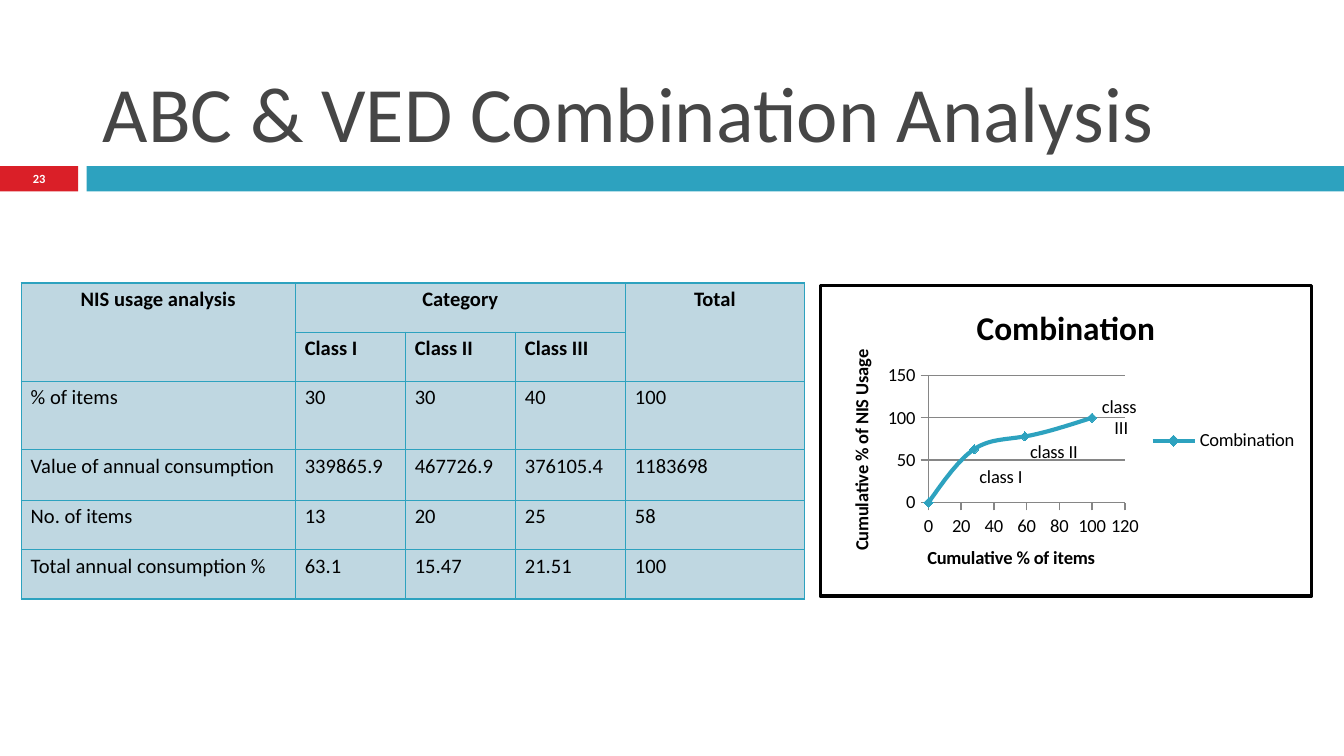
"""Build the ABC and VED combination analysis slide."""
from dataclasses import dataclass

from lxml.etree import SubElement
from pptx import Presentation
from pptx.chart.data import XyChartData
from pptx.dml.color import RGBColor
from pptx.enum.chart import XL_CHART_TYPE as ChartType, XL_LEGEND_POSITION as LegendPos
from pptx.enum.chart import XL_LABEL_POSITION as LabelPos, XL_MARKER_STYLE as Marker
from pptx.enum.chart import XL_TICK_MARK as Tick
from pptx.enum.shapes import MSO_SHAPE as Shape
from pptx.enum.text import MSO_ANCHOR as Anchor, PP_ALIGN as Align
from pptx.oxml import parse_xml
from pptx.oxml.ns import nsdecls, qn
from pptx.util import Cm, Pt

FONT = "Calibri"
RED = RGBColor(0xDA, 0x1F, 0x28)
TEAL = RGBColor(0x2D, 0xA2, 0xBF)
PALE = RGBColor(0xBF, 0xD7, 0xE1)
GREY = RGBColor(0x46, 0x46, 0x46)
LINE_GREY = RGBColor(0x86, 0x86, 0x86)
WHITE = RGBColor(0xFF, 0xFF, 0xFF)
BLACK = RGBColor(0, 0, 0)

HEADER_ROWS = 2
COLUMNS = [5.18, 2.08, 2.08, 2.08, 3.38]
HEIGHTS = [0.93, 0.93, 1.29, 0.96, 0.93, 0.93]
ROWS = [
    ["NIS usage analysis", "Category", "", "", "Total"],
    ["", "Class I", "Class II", "Class III", ""],
    ["% of items", "30", "30", "40", "100"],
    ["Value of annual consumption", "339865.9", "467726.9", "376105.4", "1183698"],
    ["No. of items", "13", "20", "25", "58"],
    ["Total annual consumption %", "63.1", "15.47", "21.51", "100"],
]
MERGES = [((0, 0), (1, 0)), ((0, 1), (0, 3)), ((0, 4), (1, 4))]
NO_LEADERS = (
    f'<c:extLst {nsdecls("c")}><c:ext uri="{{CE6537A1-D6FC-4f65-9D91-7224C49458BB}}" '
    'xmlns:c15="http://schemas.microsoft.com/office/drawing/2012/chart">'
    '<c15:showLeaderLines val="0"/></c:ext></c:extLst>')


@dataclass
class Box:
    left: float
    top: float
    width: float
    height: float

    def cm(self) -> tuple:
        return Cm(self.left), Cm(self.top), Cm(self.width), Cm(self.height)


@dataclass
class Point:
    x: float
    y: float
    label: str = ""
    drop: float = 0


POINTS = [Point(0, 0), Point(28, 63, "class I ", 0.09),
          Point(59, 78, "class II ", 0.05), Point(100, 100, "class \nIII")]


def set_font(font, size: float, color: RGBColor, bold: bool = False) -> None:
    font.name, font.size, font.bold = FONT, Pt(size), bold
    font.color.rgb = color


def add_bar(s, box: Box, color: RGBColor) -> None:
    sp = s.shapes.add_shape(Shape.RECTANGLE, *box.cm())
    sp.shadow.inherit = False
    sp.fill.solid()
    sp.fill.fore_color.rgb = color
    sp.line.fill.background()


def add_title(s, text: str, box: Box) -> None:
    sp = s.shapes.title
    sp.left, sp.top, sp.width, sp.height = box.cm()
    tf = sp.text_frame
    tf.text, tf.vertical_anchor = text, Anchor.BOTTOM
    p = tf.paragraphs[0]
    p.alignment = Align.LEFT
    set_font(p.font, 42, GREY)


def add_number(s, text: str, box: Box) -> None:
    tf = s.shapes.add_textbox(*box.cm()).text_frame
    tf.word_wrap, tf.vertical_anchor = True, Anchor.MIDDLE
    tf.margin_top = tf.margin_bottom = 0
    p = tf.paragraphs[0]
    p.text, p.alignment = text, Align.CENTER
    set_font(p.font, 6.7, WHITE, True)


def format_cell(cell, text: str, row: int) -> None:
    cell.margin_left = cell.margin_right = Cm(0.18)
    cell.margin_top = cell.margin_bottom = 0
    cell.fill.solid()
    cell.fill.fore_color.rgb = PALE
    p = cell.text_frame.paragraphs[0]
    p.text, p.line_spacing = text, 1.15
    p.alignment = Align.CENTER if row == 0 else Align.LEFT
    set_font(p.font, 11, BLACK, row < HEADER_ROWS)
    tc_pr = cell._tc.get_or_add_tcPr()
    for i, side in enumerate("LRTB"):
        tc_pr.insert(i, parse_xml(
            f'<a:ln{side} {nsdecls("a")} w="{Pt(0.79)}"><a:solidFill>'
            f'<a:srgbClr val="{TEAL}"/></a:solidFill></a:ln{side}>'))


def add_usage_table(s, box: Box) -> None:
    table = s.shapes.add_table(len(ROWS), len(COLUMNS), *box.cm()).table
    for column, width in zip(table.columns, COLUMNS):
        column.width = Cm(width)
    for r, (row, height) in enumerate(zip(ROWS, HEIGHTS)):
        table.rows[r].height = Cm(height)
        for c, text in enumerate(row):
            format_cell(table.cell(r, c), text, r)
    for first, last in MERGES:
        table.cell(*first).merge(table.cell(*last))


def make_layout(**values):
    layout = parse_xml(f'<c:layout {nsdecls("c")}><c:manualLayout/></c:layout>')
    for name, value in values.items():
        SubElement(layout[0], qn(f"c:{name}")).set("val", str(value))
    return layout


def format_axis(axis, title: str, maximum: float, step: float) -> None:
    axis.minimum_scale, axis.maximum_scale, axis.major_unit = 0, maximum, step
    axis.major_tick_mark, axis.minor_tick_mark = Tick.OUTSIDE, Tick.NONE
    axis.format.line.color.rgb = LINE_GREY
    axis.tick_labels.number_format = "General"
    axis.tick_labels.number_format_is_linked = False
    p = axis.axis_title.text_frame.paragraphs[0]
    p.text = title
    set_font(p.font, 10, BLACK, True)


def label_points(series) -> None:
    for i, point in enumerate(POINTS):
        if point.label:
            label = series.points[i].data_label
            label.text_frame.text = point.label
            for p in label.text_frame.paragraphs:
                set_font(p.font, 10, BLACK)
            label.position = LabelPos.RIGHT
            if point.drop:
                idx = series._element.xpath(f'.//c:dLbl/c:idx[@val="{i}"]')[0]
                idx.addnext(make_layout(x=-0.01, y=point.drop))
    labels = series._element.find(qn("c:dLbls"))
    for leader in labels.findall(qn("c:showLeaderLines")):
        leader.set("val", "0")
    labels.append(parse_xml(NO_LEADERS))


def smooth_line(series) -> None:
    smooth = series._element.find(qn("c:smooth"))
    if smooth is None:
        smooth = SubElement(series._element, qn("c:smooth"))
    smooth.set("val", "1")


def add_usage_chart(s, box: Box) -> None:
    data = XyChartData()
    points = data.add_series("Combination")
    for point in POINTS:
        points.add_data_point(point.x, point.y)
    chart = s.shapes.add_chart(ChartType.XY_SCATTER_SMOOTH, *box.cm(), data).chart
    set_font(chart.font, 10, BLACK)
    chart._chartSpace.find(qn("c:txPr")).addprevious(parse_xml(
        f'<c:spPr {nsdecls("c", "a")}><a:solidFill><a:srgbClr val="{WHITE}"/></a:solidFill>'
        f'<a:ln w="{Pt(2)}"><a:solidFill><a:srgbClr val="{BLACK}"/></a:solidFill></a:ln></c:spPr>'))
    chart.has_title = True
    p = chart.chart_title.text_frame.paragraphs[0]
    p.text = "Combination"
    set_font(p.font, 18, BLACK, True)
    chart.has_legend = True
    chart.legend.position, chart.legend.include_in_layout = LegendPos.RIGHT, False
    format_axis(chart.category_axis, "Cumulative % of items ", 120, 20)
    format_axis(chart.value_axis, "Cumulative % of NIS Usage", 150, 50)
    chart.category_axis.has_major_gridlines = False
    chart.value_axis.major_gridlines.format.line.color.rgb = LINE_GREY
    plot = chart.plots[0]
    plot.vary_by_categories = False
    series = plot.series[0]
    smooth_line(series)
    series.format.line.color.rgb, series.format.line.width = TEAL, Pt(2.25)
    series.marker.style, series.marker.size = Marker.DIAMOND, 5
    series.marker.format.fill.solid()
    series.marker.format.fill.fore_color.rgb = TEAL
    series.marker.format.line.color.rgb = TEAL
    label_points(series)
    area = chart._chartSpace.chart.plotArea
    for old in area.findall(qn("c:layout")):
        area.remove(old)
    area.insert(0, make_layout(layoutTarget="inner", xMode="edge", yMode="edge",
                               x=0.22, y=0.29, w=0.4, h=0.41))


def main() -> None:
    prs = Presentation()
    prs.slide_width, prs.slide_height = Cm(25.4), Cm(14.29)
    s = prs.slides.add_slide(prs.slide_layouts[5])
    add_bar(s, Box(0, 3.14, 1.48, 0.48), RED)
    add_bar(s, Box(1.64, 3.14, 23.76, 0.48), TEAL)
    add_title(s, "ABC & VED Combination Analysis", Box(1.69, 0.33, 22.66, 2.79))
    add_number(s, "23", Box(0, 3.13, 1.48, 0.5))
    add_usage_table(s, Box(0.4, 5.35, sum(COLUMNS), sum(HEIGHTS)))
    add_usage_chart(s, Box(15.47, 5.36, 9.35, 5.94))
    prs.save("out.pptx")


if __name__ == "__main__":
    main()
